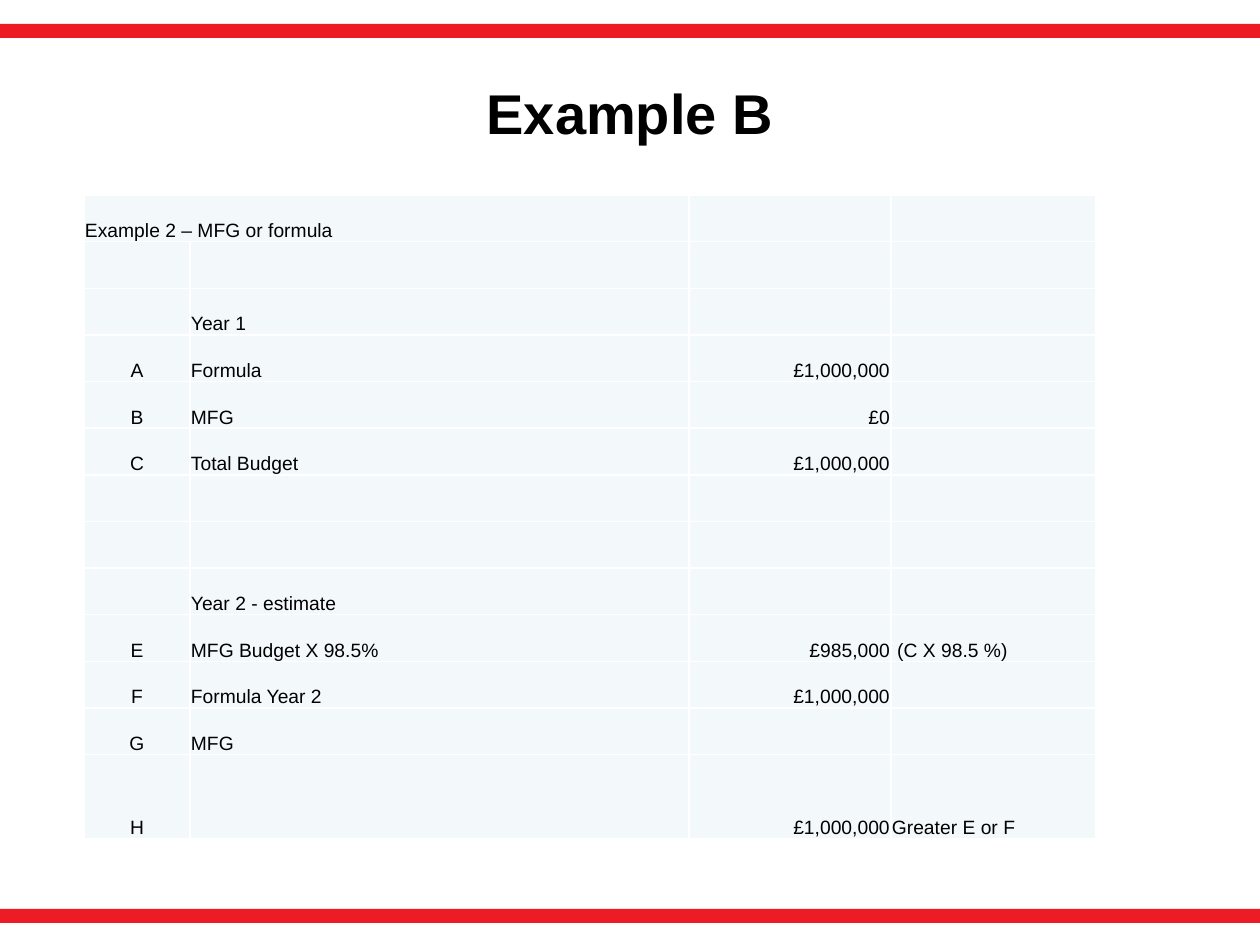
from lxml.etree import SubElement
from pptx import Presentation
from pptx.dml.color import RGBColor
from pptx.enum.shapes import MSO_SHAPE
from pptx.enum.text import MSO_ANCHOR, PP_ALIGN
from pptx.oxml.ns import qn
from pptx.util import Pt

PX = 914400 // 126
RED = RGBColor(0xED, 0x1C, 0x24)
BLACK = RGBColor(0, 0, 0)
WHITE = RGBColor(0xFF, 0xFF, 0xFF)
PALE = RGBColor(0xF3, 0xF9, 0xFA)
FONT = "Arial"

COLUMN_WIDTHS = [106, 499, 202, 205]
COLUMN_ALIGNS = [PP_ALIGN.CENTER, PP_ALIGN.LEFT, PP_ALIGN.RIGHT, PP_ALIGN.LEFT]
LAST_ROW_HEIGHT = 84
BUDGET_ROWS = [
    ("Example 2 – MFG or formula", "", "", ""),
    ("", "", "", ""),
    ("", "Year 1", "", ""),
    ("A", "Formula", "£1,000,000", ""),
    ("B", "MFG", "£0", ""),
    ("C", "Total Budget", "£1,000,000", ""),
    ("", "", "", ""),
    ("", "", "", ""),
    ("", "Year 2 - estimate", "", ""),
    ("E", "MFG Budget X 98.5%", "£985,000", " (C X 98.5 %)"),
    ("F", "Formula Year 2", "£1,000,000", ""),
    ("G", "MFG", "", ""),
    ("H", "", "£1,000,000", "Greater E or F"),
]


def scaled(box):
    return [length * PX for length in box]


def write_text(frame, text, size, align, bold=False):
    frame.text = text
    para = frame.paragraphs[0]
    para.alignment = align
    for span in para.runs:
        span.font.name = FONT
        span.font.size = Pt(size)
        span.font.bold = bold
        span.font.color.rgb = BLACK


def add_bar(page, box):
    bar = page.shapes.add_shape(MSO_SHAPE.RECTANGLE, *scaled(box))
    bar.shadow.inherit = False
    bar.fill.solid()
    bar.fill.fore_color.rgb = RED
    bar.line.fill.background()


def add_title(page, box):
    frame = page.shapes.add_textbox(*scaled(box)).text_frame
    frame.word_wrap = True
    frame.vertical_anchor = MSO_ANCHOR.MIDDLE
    write_text(frame, "Example B", 32, PP_ALIGN.CENTER, bold=True)


def add_borders(cell):
    properties = cell._tc.get_or_add_tcPr()
    for side in ("a:lnL", "a:lnR", "a:lnT", "a:lnB"):
        line = SubElement(properties, qn(side), w=str(Pt(1)))
        fill = SubElement(line, qn("a:solidFill"))
        SubElement(fill, qn("a:srgbClr"), val=str(WHITE))


def style_cell(cell, text, align):
    cell.margin_left = cell.margin_right = cell.margin_top = PX
    cell.margin_bottom = 0
    cell.vertical_anchor = MSO_ANCHOR.BOTTOM
    add_borders(cell)
    cell.fill.solid()
    cell.fill.fore_color.rgb = PALE
    write_text(cell.text_frame, text, 11, align)


def add_budget_table(page, box):
    row_count = len(BUDGET_ROWS)
    frame = page.shapes.add_table(row_count, len(COLUMN_WIDTHS), *scaled(box))
    table = frame.table
    table.first_row = table.horz_banding = False
    for column, width in zip(table.columns, COLUMN_WIDTHS):
        column.width = width * PX
    row_height = (box[3] - LAST_ROW_HEIGHT) * PX // (row_count - 1)
    for row, texts in zip(table.rows, BUDGET_ROWS):
        row.height = row_height
        for cell, text, align in zip(row.cells, texts, COLUMN_ALIGNS):
            style_cell(cell, text, align)
    table.rows[row_count - 1].height = LAST_ROW_HEIGHT * PX
    heading = table.cell(0, 0)
    heading.merge(table.cell(0, 1))
    heading.text_frame.paragraphs[0].alignment = PP_ALIGN.LEFT


def main():
    deck = Presentation()
    deck.slide_width, deck.slide_height = scaled((1260, 945))
    page = deck.slides.add_slide(deck.slide_layouts[6])
    page.background.fill.solid()
    page.background.fill.fore_color.rgb = WHITE
    for top in (24, 909):
        add_bar(page, (0, top, 1260, 14))
    add_title(page, (63, 34, 1134, 157))
    add_budget_table(page, (84, 195, sum(COLUMN_WIDTHS), 644))
    deck.save("out.pptx")


if __name__ == "__main__":
    main()
